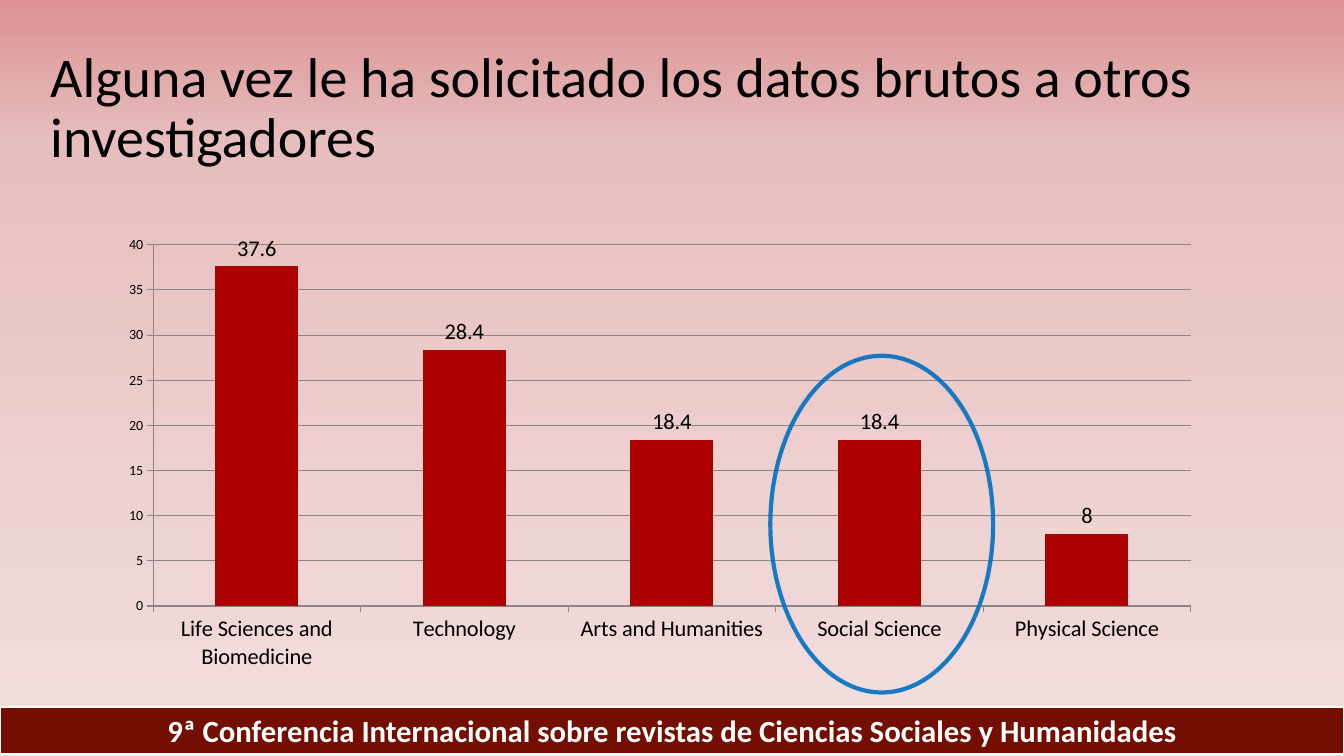
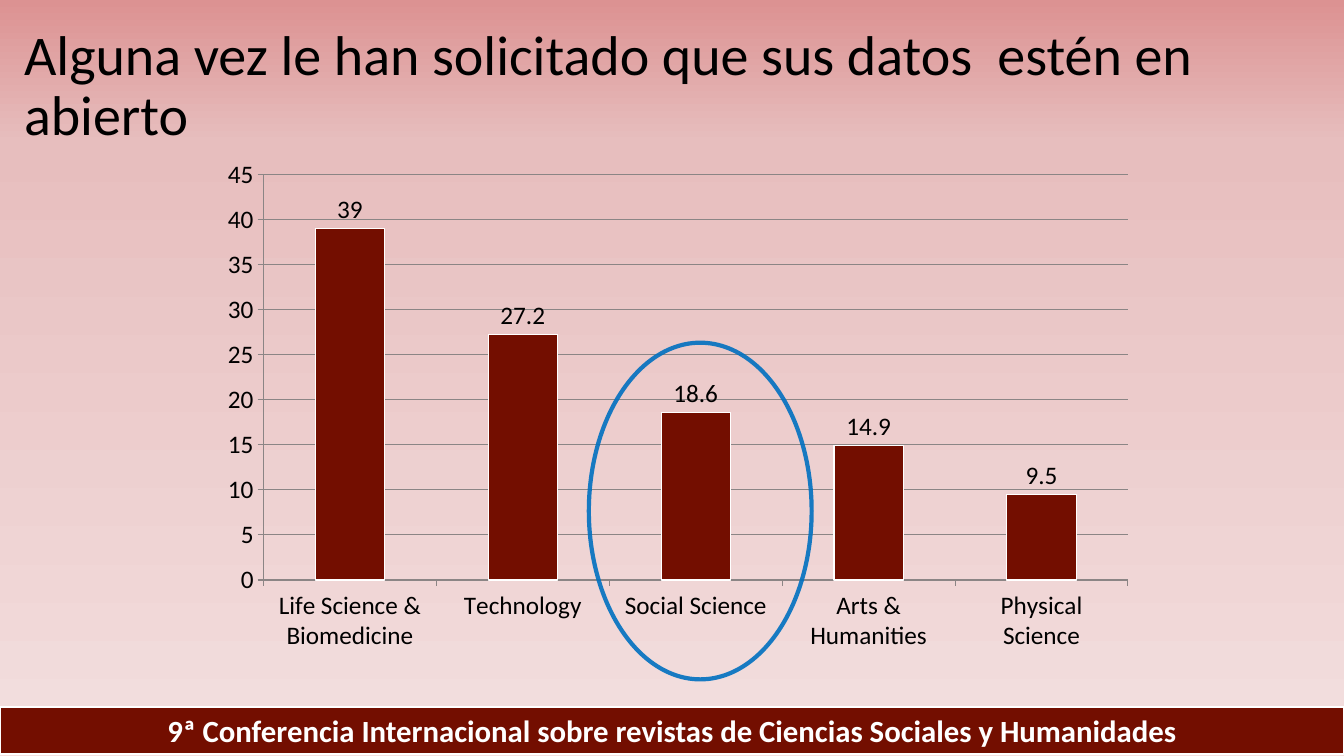
from dataclasses import dataclass
from typing import Any

from lxml import etree
from pptx import Presentation
from pptx import util as u
from pptx.chart import data as chart_data
from pptx.dml import color
from pptx.enum import chart as charts, shapes, text
from pptx.oxml import ns


@dataclass(frozen=True)
class Theme:
    font: str = "Calibri"
    ink: str = "000000"
    white: str = "FFFFFF"
    footer: str = "730E00"
    bright_bar: str = "AD0101"
    ring: str = "0070C0"
    grid: str = "8B8585"
    gradient: tuple[tuple[int, str], ...] = ((0, "DC9292"), (19, "E7BEBE"), (100, "F3DFDF"))
    title_size: int = 40
    footer_size: int = 22
    ring_opacity: int = 89


@dataclass(frozen=True)
class Box:
    left: float
    top: float
    width: float
    height: float

    def lengths(self) -> tuple[u.Length, ...]:
        return tuple(u.Inches(value) for value in (self.left, self.top, self.width, self.height))


@dataclass(frozen=True)
class Survey:
    title: str
    title_box: Box
    chart_box: Box
    plot: Box
    ring_box: Box
    answers: dict[str, float]
    maximum: int
    scale_size: int
    label_size: int
    bar_color: str
    bar_outline: str | None = None


THEME = Theme()
SLIDE = Box(0, 0, 13.33, 7.5)
FOOTER_BOX = Box(0, 7.01, SLIDE.width, 0.47)
FOOTER = "9ª Conferencia Internacional sobre revistas de Ciencias Sociales y Humanidades"

SURVEYS = (
    Survey(
        title="Alguna vez le ha solicitado los datos brutos a otros investigadores",
        title_box=Box(0.4, 0.36, 12.66, 1.45),
        chart_box=Box(1.08, 2.25, 10.95, 4.48),
        plot=Box(0.04, 0.04, 0.94, 0.8),
        ring_box=Box(7.64, 3.53, 2.21, 3.34),
        answers={
            "Life Sciences and Biomedicine": 37.6,
            "Technology": 28.4,
            "Arts and Humanities": 18.4,
            "Social Science": 18.4,
            "Physical Science": 8,
        },
        maximum=40,
        scale_size=10,
        label_size=16,
        bar_color=THEME.bright_bar,
    ),
    Survey(
        title="Alguna vez le han solicitado que sus datos  estén en abierto",
        title_box=Box(0.14, 0.14, 13.05, 1.45),
        chart_box=Box(2.06, 1.53, 9.22, 5.03),
        plot=Box(0.06, 0.04, 0.93, 0.8),
        ring_box=Box(5.84, 3.4, 2.21, 3.34),
        answers={
            "Life Science & Biomedicine": 39,
            "Technology": 27.2,
            "Social Science": 18.6,
            "Arts & Humanities": 14.9,
            "Physical Science": 9.5,
        },
        maximum=45,
        scale_size=18,
        label_size=18,
        bar_color=THEME.footer,
        bar_outline=THEME.white,
    ),
)


def apply_format(target: Any, values: dict[str, Any]) -> None:
    for name, value in values.items():
        setattr(target, name, value)


def set_fill(fill: Any, rgb: str) -> None:
    fill.solid()
    fill.fore_color.rgb = color.RGBColor.from_string(rgb)


def set_line(line: Any, rgb: str, points: float) -> None:
    set_fill(line.fill, rgb)
    line.width = u.Pt(points)


def set_font(font: Any, size: int, rgb: str, bold: bool = False) -> None:
    apply_format(font, {"name": THEME.font, "size": u.Pt(size), "bold": bold})
    set_fill(font.fill, rgb)


def write_text(shape: Any, content: str, size: int, rgb: str, bold: bool,
               paragraph_format: dict[str, Any]) -> None:
    apply_format(shape.text_frame,
                 {"word_wrap": True, "vertical_anchor": text.MSO_ANCHOR.MIDDLE})
    paragraph = shape.text_frame.paragraphs[0]
    apply_format(paragraph, paragraph_format)
    run = paragraph.add_run()
    run.text = content
    set_font(run.font, size, rgb, bold)


def paint_background(slide: Any) -> None:
    fill = slide.background.fill
    fill.gradient()
    fill.gradient_angle = 270
    stops = next(slide.element.iter(ns.qn("a:gsLst")))
    for stop in list(stops):
        stops.remove(stop)
    for position, rgb in THEME.gradient:
        stop = etree.SubElement(stops, ns.qn("a:gs"), pos=str(position * 1000))
        etree.SubElement(stop, ns.qn("a:srgbClr"), val=rgb)


def add_title(slide: Any, survey: Survey) -> None:
    title = slide.shapes.add_textbox(*survey.title_box.lengths())
    write_text(title, survey.title, THEME.title_size, THEME.ink, False, {"line_spacing": 0.9})


def place_plot(chart: Any, plot: Box) -> None:
    area = chart.element.chart.plotArea
    for layout in area.findall(ns.qn("c:layout")):
        area.remove(layout)
    layout = etree.Element(ns.qn("c:layout"))
    area.insert(0, layout)
    manual = etree.SubElement(layout, ns.qn("c:manualLayout"))
    settings = {
        "layoutTarget": "inner", "xMode": "edge", "yMode": "edge",
        "x": plot.left, "y": plot.top, "w": plot.width, "h": plot.height,
    }
    for name, value in settings.items():
        etree.SubElement(manual, ns.qn(f"c:{name}"), val=str(value))


def add_survey_chart(slide: Any, survey: Survey) -> None:
    values = chart_data.CategoryChartData(number_format="General")
    values.categories = list(survey.answers)
    values.add_series("Series 1", list(survey.answers.values()))
    chart = slide.shapes.add_chart(
        charts.XL_CHART_TYPE.COLUMN_CLUSTERED, *survey.chart_box.lengths(), values
    ).chart
    apply_format(chart, {"has_title": False, "has_legend": False})
    set_font(chart.font, survey.scale_size, THEME.ink)
    place_plot(chart, survey.plot)

    apply_format(chart.value_axis, {
        "minimum_scale": 0, "maximum_scale": survey.maximum, "major_unit": 5,
        "has_major_gridlines": True,
    })
    set_line(chart.value_axis.major_gridlines.format.line, THEME.grid, 0.75)
    axes = ((chart.value_axis, survey.scale_size), (chart.category_axis, survey.label_size))
    for axis, size in axes:
        axis.major_tick_mark = charts.XL_TICK_MARK.OUTSIDE
        set_line(axis.format.line, THEME.grid, 0.75)
        set_font(axis.tick_labels.font, size, THEME.ink)

    columns = chart.plots[0]
    apply_format(columns, {"gap_width": 150, "vary_by_categories": False, "has_data_labels": True})
    apply_format(columns.data_labels, {
        "show_value": True, "position": charts.XL_LABEL_POSITION.OUTSIDE_END,
    })
    set_font(columns.data_labels.font, survey.label_size, THEME.ink)
    bars = columns.series[0].format
    set_fill(bars.fill, survey.bar_color)
    if survey.bar_outline:
        set_line(bars.line, survey.bar_outline, 0.75)


def add_ring(slide: Any, box: Box) -> None:
    ring = slide.shapes.add_shape(shapes.MSO_SHAPE.OVAL, *box.lengths())
    ring.shadow.inherit = False
    ring.fill.background()
    set_line(ring.line, THEME.ring, 3)
    line_color = next(ring.element.iter(ns.qn("a:srgbClr")))
    etree.SubElement(line_color, ns.qn("a:alpha"), val=str(THEME.ring_opacity * 1000))


def add_footer(slide: Any) -> None:
    footer = slide.shapes.add_shape(shapes.MSO_SHAPE.RECTANGLE, *FOOTER_BOX.lengths())
    footer.shadow.inherit = False
    set_fill(footer.fill, THEME.footer)
    set_line(footer.line, THEME.white, 1.5)
    write_text(footer, FOOTER, THEME.footer_size, THEME.white, True,
               {"alignment": text.PP_ALIGN.CENTER})


def main() -> None:
    presentation = Presentation()
    apply_format(presentation, {
        "slide_width": u.Inches(SLIDE.width), "slide_height": u.Inches(SLIDE.height),
    })
    for survey in SURVEYS:
        slide = presentation.slides.add_slide(presentation.slide_layouts[6])
        paint_background(slide)
        add_title(slide, survey)
        add_survey_chart(slide, survey)
        add_ring(slide, survey.ring_box)
        add_footer(slide)
    presentation.save("out.pptx")


if __name__ == "__main__":
    main()
